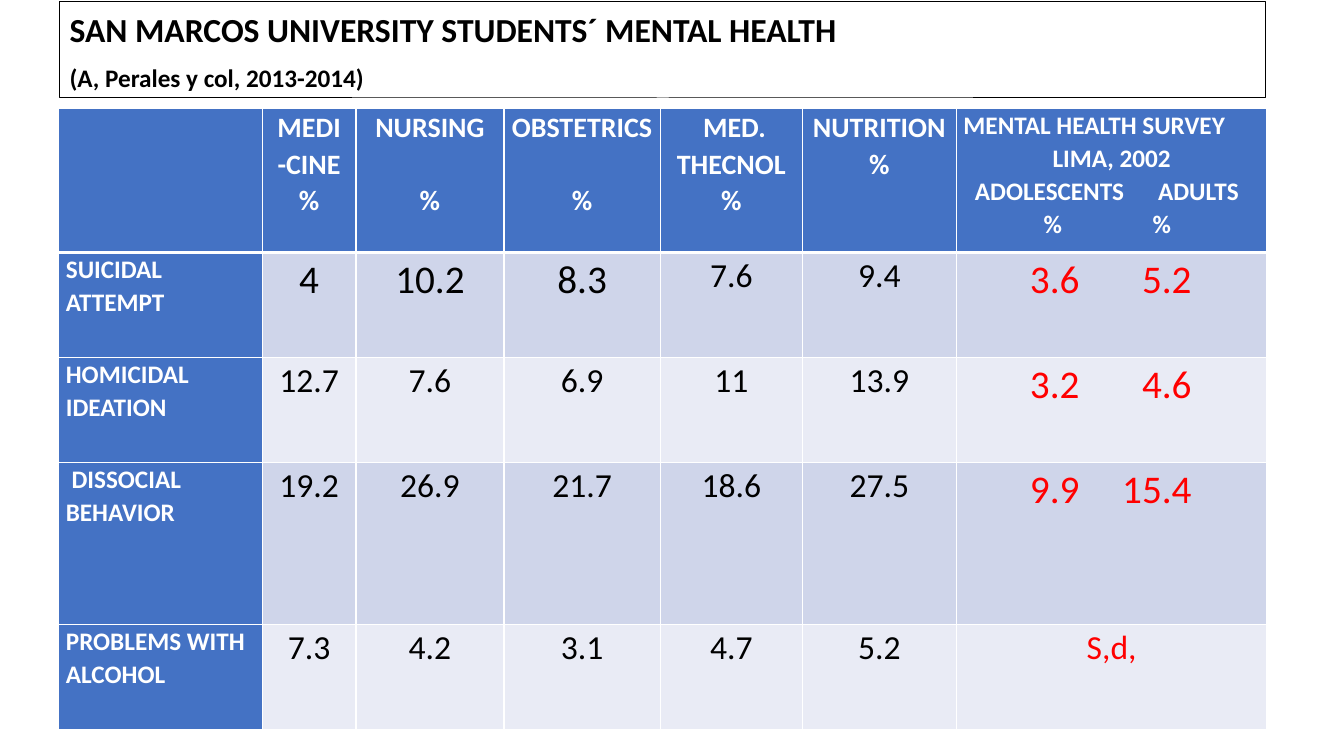
import pptx
import pptx.dml.color
import pptx.enum.text
import pptx.oxml.ns
import pptx.util
from lxml import etree
from pptx.util import Cm

FONT = "Calibri"
BLUE, WHITE, BLACK, RED = "4472C4", "FFFFFF", "000000", "FF0000"
BANDS = ("CFD5EA", "E9EBF5")
LEFT = pptx.enum.text.PP_ALIGN.LEFT
CENTER = pptx.enum.text.PP_ALIGN.CENTER

COLUMN_WIDTHS = (5.13, 2.36, 3.73, 3.94, 3.58, 3.88, 7.83)
ROW_HEIGHTS = (3.63, 2.65, 2.65, 4.07, 2.65)
BLANK_LINE = 26

FACULTIES = (
    (("MEDI -CINE", "%"), 0),
    (("NURSING", "%"), BLANK_LINE),
    (("OBSTETRICS", "%"), BLANK_LINE),
    ((" MED.", "THECNOL", "%"), 0),
    (("NUTRITION", "%"), 0),
)
SURVEY_HEADING = (
    ("MENTAL HEALTH SURVEY", LEFT, ()),
    ("LIMA, 2002", CENTER, ()),
    ("\tADOLESCENTS\tADULTS", LEFT, ((2.17, "ctr"), (5.92, "ctr"))),
    ("\t%\t%", LEFT, ((2.25, "ctr"), (5, "ctr"))),
)
SURVEY_TABS = ((2.3, "ctr"), (5.75, "r"))
PROBLEMS = (
    (("SUICIDAL", "ATTEMPT"), ("4", "10.2", "8.3", "7.6", "9.4"), ("3.6", "5.2")),
    (("HOMICIDAL", "IDEATION"), ("12.7", "7.6", "6.9", "11", "13.9"), ("3.2", "4.6")),
    ((" DISSOCIAL", "BEHAVIOR"), ("19.2", "26.9", "21.7", "18.6", "27.5"), ("9.9", "15.4")),
    (("PROBLEMS WITH", "ALCOHOL"), ("7.3", "4.2", "3.1", "4.7", "5.2"), ("S,d,",)),
)


def color(hex_text):
    """Turn a hex string into a colour."""
    return pptx.dml.color.RGBColor.from_string(hex_text)


def paint(target, hex_text):
    """Give a shape or cell a solid fill."""
    target.fill.solid()
    target.fill.fore_color.rgb = color(hex_text)


def add_tabs(para, tabs):
    """Add tab stops, given as pairs of position in cm and alignment."""
    tab_list = etree.SubElement(para._p.get_or_add_pPr(), pptx.oxml.ns.qn("a:tabLst"))
    for position, alignment in tabs:
        etree.SubElement(tab_list, pptx.oxml.ns.qn("a:tab"),
                         pos=str(int(Cm(position))), algn=alignment)


def add_line(frame, text, size, hex_text, bold=False, align=LEFT, tabs=(), before=0, after=0):
    """Write one paragraph, using the empty first one when it is free."""
    first = frame.paragraphs[0]
    para = frame.add_paragraph() if first.runs else first
    if tabs:
        add_tabs(para, tabs)
    para.alignment = align
    para.line_spacing = 1.07
    para.space_before = pptx.util.Pt(before)
    para.space_after = pptx.util.Pt(after)
    span = para.add_run()
    span.text = text
    span.font.name = FONT
    span.font.size = pptx.util.Pt(size)
    span.font.bold = bold
    span.font.color.rgb = color(hex_text)


def add_borders(cell, top, bottom):
    """Draw white cell borders with the given top and bottom widths in points."""
    properties = cell._tc.get_or_add_tcPr()
    for index, (side, width) in enumerate((("L", 1), ("R", 1), ("T", top), ("B", bottom))):
        edge = etree.Element(pptx.oxml.ns.qn("a:ln" + side), w=str(int(pptx.util.Pt(width))))
        fill = etree.SubElement(edge, pptx.oxml.ns.qn("a:solidFill"))
        etree.SubElement(fill, pptx.oxml.ns.qn("a:srgbClr"), val=WHITE)
        properties.insert(index, edge)


def format_title(box):
    """Place the framed title and write its two lines."""
    box.left, box.top, box.width, box.height = Cm(1.5), Cm(0.03), Cm(30.4), Cm(2.44)
    paint(box, WHITE)
    box.line.color.rgb = color(BLACK)
    box.line.width = pptx.util.Pt(0.75)
    frame = box.text_frame
    frame.word_wrap = True
    frame.auto_size = pptx.enum.text.MSO_AUTO_SIZE.NONE
    frame.vertical_anchor = pptx.enum.text.MSO_ANCHOR.TOP
    add_line(frame, "SAN MARCOS UNIVERSITY STUDENTS´ MENTAL HEALTH", 24, BLACK, True, after=8)
    add_line(frame, "(A, Perales y col, 2013-2014)", 18, BLACK, True, after=8)


def add_grid(slide):
    """Add the empty table with its fills, margins and borders."""
    frame = slide.shapes.add_table(len(ROW_HEIGHTS), len(COLUMN_WIDTHS), Cm(1.48), Cm(2.73),
                                   Cm(sum(COLUMN_WIDTHS)), Cm(sum(ROW_HEIGHTS)))
    table = frame.table
    table.horz_banding = False
    for column, width in zip(table.columns, COLUMN_WIDTHS):
        column.width = Cm(width)
    for row_index, (row, height) in enumerate(zip(table.rows, ROW_HEIGHTS)):
        row.height = Cm(height)
        for column_index, cell in enumerate(row.cells):
            heading = row_index == 0 or column_index == 0
            paint(cell, BLUE if heading else BANDS[(row_index - 1) % 2])
            cell.margin_left = cell.margin_right = Cm(0.18)
            cell.margin_top = cell.margin_bottom = 0
            add_borders(cell, 3 if row_index == 1 else 1, 3 if row_index == 0 else 1)
    return table


def fill_headings(table):
    """Write the faculty headings and the survey heading."""
    for column, (lines, gap) in enumerate(FACULTIES, 1):
        for index, text in enumerate(lines):
            add_line(table.cell(0, column).text_frame, text, 20, WHITE, True, CENTER,
                     before=gap if index else 0)
    for text, align, tabs in SURVEY_HEADING:
        add_line(table.cell(0, 6).text_frame, text, 18, WHITE, True, align, tabs)


def fill_problem(table, row, label, rates, survey):
    """Write one problem's label, faculty rates and survey rates."""
    for text in label:
        add_line(table.cell(row, 0).text_frame, text, 18, WHITE, True)
    for column, rate in enumerate(rates, 1):
        size = 28 if row == 1 and column <= 3 else 24
        add_line(table.cell(row, column).text_frame, rate, size, BLACK, align=CENTER)
    frame = table.cell(row, 6).text_frame
    if len(survey) == 1:
        add_line(frame, survey[0], 24, RED, align=CENTER)
    else:
        add_line(frame, "\t" + "\t".join(survey), 28, RED, tabs=SURVEY_TABS)


def main():
    """Build and save the slide."""
    deck = pptx.Presentation()
    deck.slide_width, deck.slide_height = Cm(33.87), Cm(19.05)
    slide = deck.slides.add_slide(deck.slide_layouts[5])
    format_title(slide.shapes.title)
    table = add_grid(slide)
    fill_headings(table)
    for row, (label, rates, survey) in enumerate(PROBLEMS, 1):
        fill_problem(table, row, label, rates, survey)
    deck.save("out.pptx")


if __name__ == "__main__":
    main()
